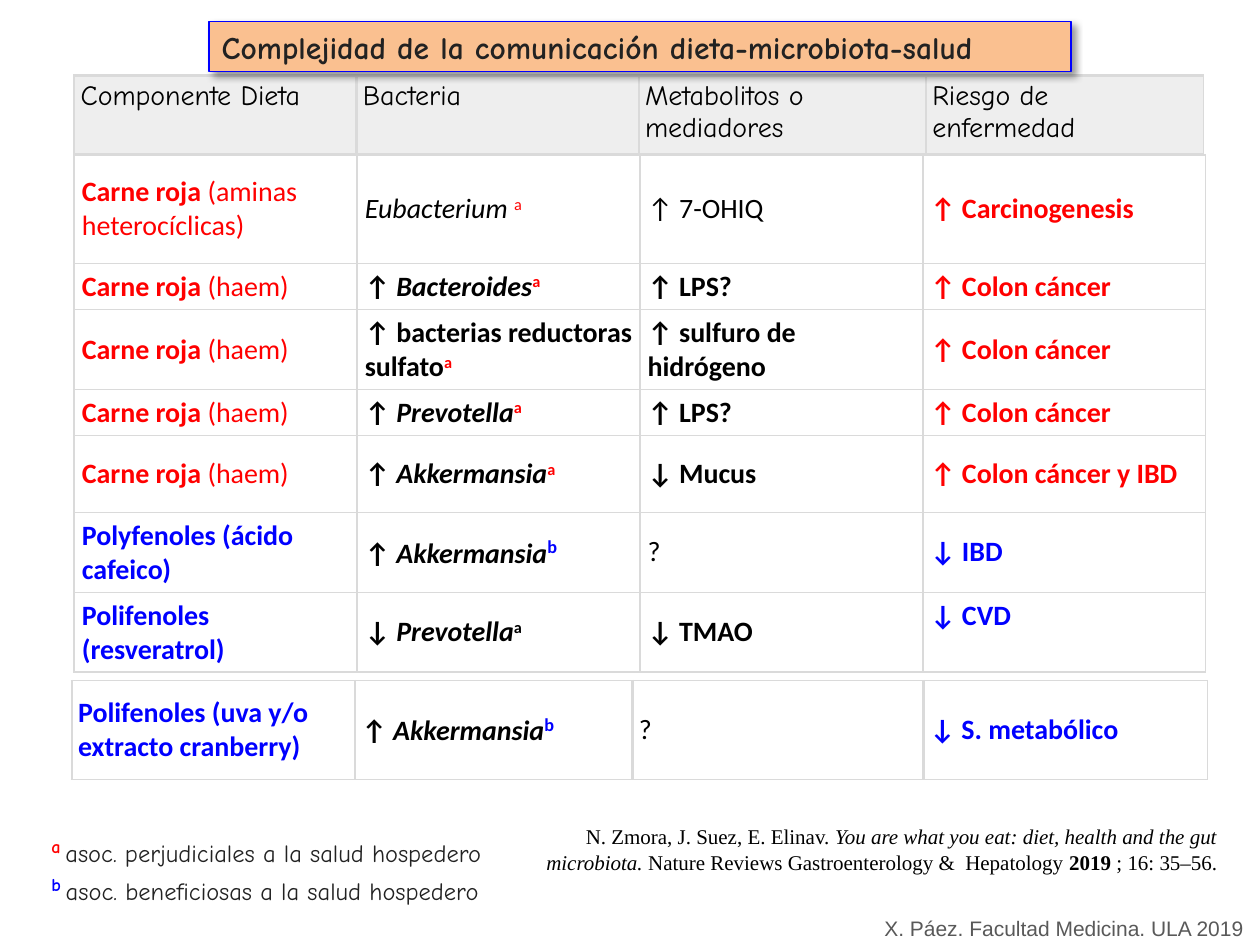
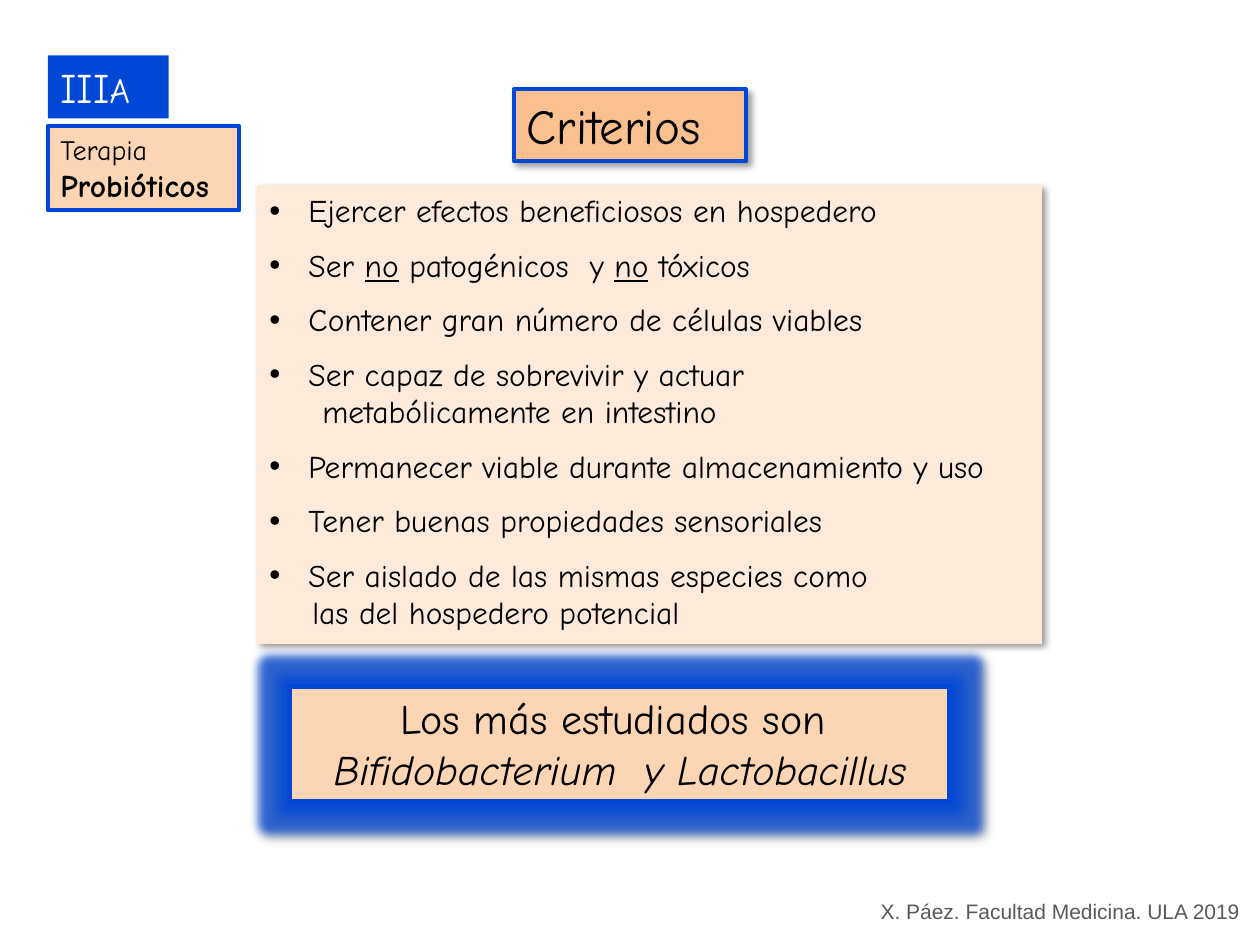
"""Build two slides on diet, microbiota and probiotics."""
from lxml import etree
from pptx import Presentation
from pptx.dml.color import RGBColor
from pptx.enum.shapes import MSO_SHAPE
from pptx.enum.text import MSO_ANCHOR, MSO_AUTO_SIZE, PP_ALIGN
from pptx.oxml.ns import qn
from pptx.util import Inches, Pt

RECT = MSO_SHAPE.RECTANGLE
TOP, MIDDLE = MSO_ANCHOR.TOP, MSO_ANCHOR.MIDDLE
LEFT, CENTER, RIGHT = PP_ALIGN.LEFT, PP_ALIGN.CENTER, PP_ALIGN.RIGHT
NO_FIT = MSO_AUTO_SIZE.NONE

BLACK, WHITE, INK, GREY = "000000", "FFFFFF", "222222", "595959"
RED, BLUE, ROYAL = "FF0000", "0000FF", "0047D6"
ORANGE, PEACH, CREAM = "FAC090", "FCD5B5", "FDEADA"
BORDER, HEAD_FILL = "DADADA", "EEEEEE"
COMIC, CALIBRI = "Comic Neue", "Calibri"

FOOTER = "X. Páez. Facultad Medicina. ULA 2019"


def strong(text, color=BLACK, **fmt):
    """Return a bold run."""
    return text, dict(bold=True, color=color, **fmt)


def sup(text, color, **fmt):
    """Return a superscript run."""
    return text, dict(color=color, raised=True, **fmt)


def bacterium(arrow, name, mark):
    """Return the runs of a bacterium with its arrow and note mark."""
    return [strong(arrow + "\u00a0"), strong(name, italic=True), mark]


def meat(detail):
    """Return the runs of a red meat component."""
    return [strong("Carne roja ", RED), (detail, dict(color=RED))]


HARM = sup("a", RED, bold=True)
GOOD = sup("b", BLUE, bold=True, size=18)
HEADINGS = [[["Componente Dieta"], ["Bacteria"], ["Metabolitos o mediadores"],
             ["Riesgo de enfermedad"]]]
COLON = [strong("↑ Colon cáncer", RED)]
DIET_ROWS = [
    [meat("(aminas heterocíclicas)"),
     [("Eubacterium\u00a0", dict(italic=True)), sup("a", RED)],
     ["↑ 7-OHIQ"], [strong("↑ Carcinogenesis", RED)]],
    [meat("(haem)"), bacterium("↑", "Bacteroides", HARM),
     [strong("↑ LPS?")], COLON],
    [meat("(haem)"), [strong("↑ bacterias reductoras sulfato"), HARM],
     [strong("↑ sulfuro de hidrógeno")], COLON],
    [meat("(haem)"), bacterium("↑", "Prevotella", HARM),
     [strong("↑ LPS?")], COLON],
    [meat("(haem)"), bacterium("↑", "Akkermansia", HARM),
     [strong("↓ Mucus")], [strong("↑ Colon cáncer y IBD", RED)]],
    [[strong("Polyfenoles (ácido cafeico)", BLUE)],
     bacterium("↑", "Akkermansia", GOOD), ["?"], [strong("↓ IBD", BLUE)]],
    [[strong("Polifenoles (resveratrol)", BLUE)],
     bacterium("↓", "Prevotella", sup("a", BLACK, bold=True)),
     [strong("↓ TMAO")], [strong("↓ CVD", BLUE)]],
]
GRAPE_ROW = [[[strong("Polifenoles (uva y/o extracto cranberry)", BLUE)],
              bacterium("↑", "Akkermansia", GOOD), ["?"],
              [strong("↓ S. metabólico", BLUE)]]]
CITATION = [
    "N. Zmora, J. Suez, E. Elinav. ",
    ("You are what you eat: diet, health and the gut microbiota. ",
     dict(italic=True)),
    "Nature Reviews Gastroenterology &  Hepatology ",
    strong("2019"), " ; 16: 35–56."]
NOTES = [[sup(mark, color, bold=True, size=18), sup(" ", color), text]
         for mark, color, text in [
             ("a", RED, "asoc. perjudiciales a la salud hospedero\u00a0"),
             ("b", BLUE, "asoc. beneficiosas a la salud hospedero")]]

UNDER_NO = ("no", dict(underline=True))
CRITERIA = [
    (["Ejercer efectos beneficiosos en hospedero"], None),
    (["Ser ", UNDER_NO, " patogénicos  y ", UNDER_NO, " tóxicos"], None),
    (["Contener gran número de células viables"], None),
    (["Ser capaz de sobrevivir y actuar"], None),
    (["metabólicamente en intestino"], 0.42),
    (["Permanecer viable durante almacenamiento y uso"], None),
    (["Tener buenas propiedades sensoriales"], None),
    (["Ser aislado de las mismas especies como"], None),
    (["las del hospedero potencial"], 0.34),
]


def rgb(value):
    """Turn a hex string into a colour."""
    return RGBColor.from_string(value)


def place(sp, box):
    """Move and size a shape, in inches."""
    sp.left, sp.top, sp.width, sp.height = map(Inches, box)


def add_run(p, text, font=COMIC, size=18, color=BLACK, bold=False,
            italic=False, underline=False, raised=False):
    """Add formatted text to a paragraph."""
    r = p.add_run()
    r.text = text
    f = r.font
    f.name, f.size, f.bold, f.italic = font, Pt(size), bold, italic
    f.underline = underline
    f.color.rgb = rgb(color)
    if raised:
        r._r.get_or_add_rPr().set("baseline", "30000")


def write(tf, paras, align=LEFT, **base):
    """Fill a text frame with paragraphs of runs."""
    for i, runs in enumerate(paras):
        p = tf.add_paragraph() if i else tf.paragraphs[0]
        p.alignment = align
        for run in runs:
            text, fmt = (run, {}) if isinstance(run, str) else run
            add_run(p, text, **{**base, **fmt})


def add_effect(sp, tag, color, alpha, **attrs):
    """Add a glow or shadow to a shape."""
    effects = sp._element.spPr.find(qn("a:effectLst"))
    node = etree.SubElement(effects, qn(tag),
                            {k: str(v) for k, v in attrs.items()})
    clr = etree.SubElement(node, qn("a:srgbClr"), val=color)
    etree.SubElement(clr, qn("a:alpha"), val=str(alpha * 1000))


def style_box(sp, box, paras, fill, line=None, width=2.25, shadow=True,
              glow=None, **fmt):
    """Place, paint and fill a rectangle or title."""
    place(sp, box)
    sp.fill.solid()
    sp.fill.fore_color.rgb = rgb(fill)
    if line:
        sp.line.color.rgb = rgb(line)
        sp.line.width = Pt(width)
    else:
        sp.line.fill.background()
    sp.shadow.inherit = False
    if glow:
        add_effect(sp, "a:glow", glow, 75, rad=Pt(11))
    if shadow:
        add_effect(sp, "a:outerShdw", BLACK, 40, blurRad=Pt(4), dist=Pt(3),
                   dir=45 * 60000, algn="tl", rotWithShape=0)
    tf = sp.text_frame
    tf.word_wrap, tf.auto_size, tf.vertical_anchor = True, NO_FIT, TOP
    write(tf, paras, **fmt)
    return tf


def add_box(s, box, paras, fill, **fmt):
    """Add a filled rectangle with text."""
    sp = s.shapes.add_shape(RECT, *map(Inches, box))
    return style_box(sp, box, paras, fill, **fmt)


def add_text(s, box, paras, wrap=True, **fmt):
    """Add a text box."""
    tf = s.shapes.add_textbox(*map(Inches, box)).text_frame
    tf.word_wrap = wrap
    write(tf, paras, **fmt)


def add_footer(s, left, top):
    """Add the shared author line."""
    add_text(s, (left, top, 3.08, 0.3), [[FOOTER]], wrap=False,
             font="Arial", size=12, color=GREY)


def set_borders(cell, **widths):
    """Draw the four borders of a cell, widths in points."""
    tcPr = cell._tc.get_or_add_tcPr()
    for side, width in widths.items():
        ln = etree.SubElement(tcPr, qn("a:ln" + side), w=str(Pt(width)))
        paint = etree.SubElement(ln, qn("a:solidFill"))
        etree.SubElement(paint, qn("a:srgbClr"), val=BORDER)


def add_grid(s, left, top, cols, heights, rows, fill=WHITE, anchor=MIDDLE,
             inset=(0.05, 0.04), first=0.75, last=0.75, **fmt):
    """Add a bordered table and return it."""
    table = s.shapes.add_table(
        len(rows), len(cols), Inches(left), Inches(top),
        Inches(sum(cols)), Inches(sum(heights))).table
    table.first_row = table.horz_banding = False
    for col, width in zip(table.columns, cols):
        col.width = Inches(width)
    for i, (row, height) in enumerate(zip(rows, heights)):
        table.rows[i].height = Inches(height)
        for j, runs in enumerate(row):
            cell = table.cell(i, j)
            set_borders(cell, L=1.5, R=0.75 if j == len(cols) - 1 else 1.5,
                        T=first if i == 0 else 0.75,
                        B=last if i == len(rows) - 1 else 0.75)
            cell.fill.solid()
            cell.fill.fore_color.rgb = rgb(fill)
            cell.margin_left = cell.margin_right = Inches(inset[0])
            cell.margin_top = cell.margin_bottom = Inches(inset[1])
            cell.vertical_anchor = anchor
            write(cell.text_frame, [runs], size=16, **fmt)
    return table


def build_diet(s):
    """Build the diet and microbiota tables."""
    add_footer(s, 6.92, 7.22)
    diet = add_grid(s, 0.59, 1.23, [2.245] * 4,
                    [0.86, 0.36, 0.62, 0.36, 0.61, 0.62, 0.62], DIET_ROWS,
                    inset=(0.06, 0.05), last=1.5, font=CALIBRI)
    diet.cell(len(DIET_ROWS) - 1, 3).vertical_anchor = TOP
    add_grid(s, 0.59, 0.6, [2.24, 2.24, 2.28, 2.2], [0.62], HEADINGS,
             fill=HEAD_FILL, anchor=TOP, first=1.5)
    add_text(s, (4.08, 6.49, 5.68, 0.5), [CITATION], align=RIGHT,
             font="Times New Roman", size=12)
    add_text(s, (0.31, 6.55, 4.13, 0.57), NOTES, size=14, color=INK)
    title = s.shapes.title
    style_box(title, (1.66, 0.17, 6.84, 0.4),
              [["Complejidad de la comunicación dieta-microbiota-salud"]],
              ORANGE, line=BLUE, width=0.75, color=INK, bold=True)
    title._element.getparent().append(title._element)
    add_grid(s, 0.57, 5.4, [2.25, 2.2, 2.31, 2.25], [0.79], GRAPE_ROW,
             font=CALIBRI)


def build_criteria(s):
    """Build the probiotic criteria slide."""
    style_box(s.shapes.title, (4.08, 0.71, 1.84, 0.57), [["Criterios"]],
              ORANGE, line=ROYAL, size=28)
    tf = add_box(s, (2.04, 1.47, 6.23, 3.64), [c[0] for c in CRITERIA], CREAM)
    for i, (p, (_, indent)) in enumerate(zip(tf.paragraphs, CRITERIA)):
        pPr = p._p.get_or_add_pPr()
        pPr.set("marL", str(Inches(indent or 0.31)))
        if indent is None:
            pPr.set("indent", str(Inches(-0.31)))
            if i:
                p.space_before = Pt(9.5)
            etree.SubElement(pPr, qn("a:buFont"), typeface="Arial")
            etree.SubElement(pPr, qn("a:buChar"), char="•")
    add_box(s, (2.3, 5.45, 5.24, 0.91),
            [["Los más estudiados son "],
             [("Bifidobacterium  y Lactobacillus", dict(italic=True))]],
            PEACH, line=ROYAL, width=3, glow=ROYAL, align=CENTER, size=24)
    add_footer(s, 6.89, 7.08)
    add_box(s, (0.38, 0.44, 0.96, 0.5), [["III", ("A", dict(size=20))]],
            ROYAL, shadow=False, size=24, color=WHITE)
    add_box(s, (0.38, 1, 1.52, 0.67),
            [["Terapia"], [strong("Probióticos", size=18)]],
            PEACH, line=ROYAL, shadow=False, size=16)


def main():
    """Build and save the presentation."""
    prs = Presentation()
    prs.slide_width, prs.slide_height = Inches(10), Inches(7.5)
    for build in (build_diet, build_criteria):
        build(prs.slides.add_slide(prs.slide_layouts[5]))
    prs.save("out.pptx")


if __name__ == "__main__":
    main()
